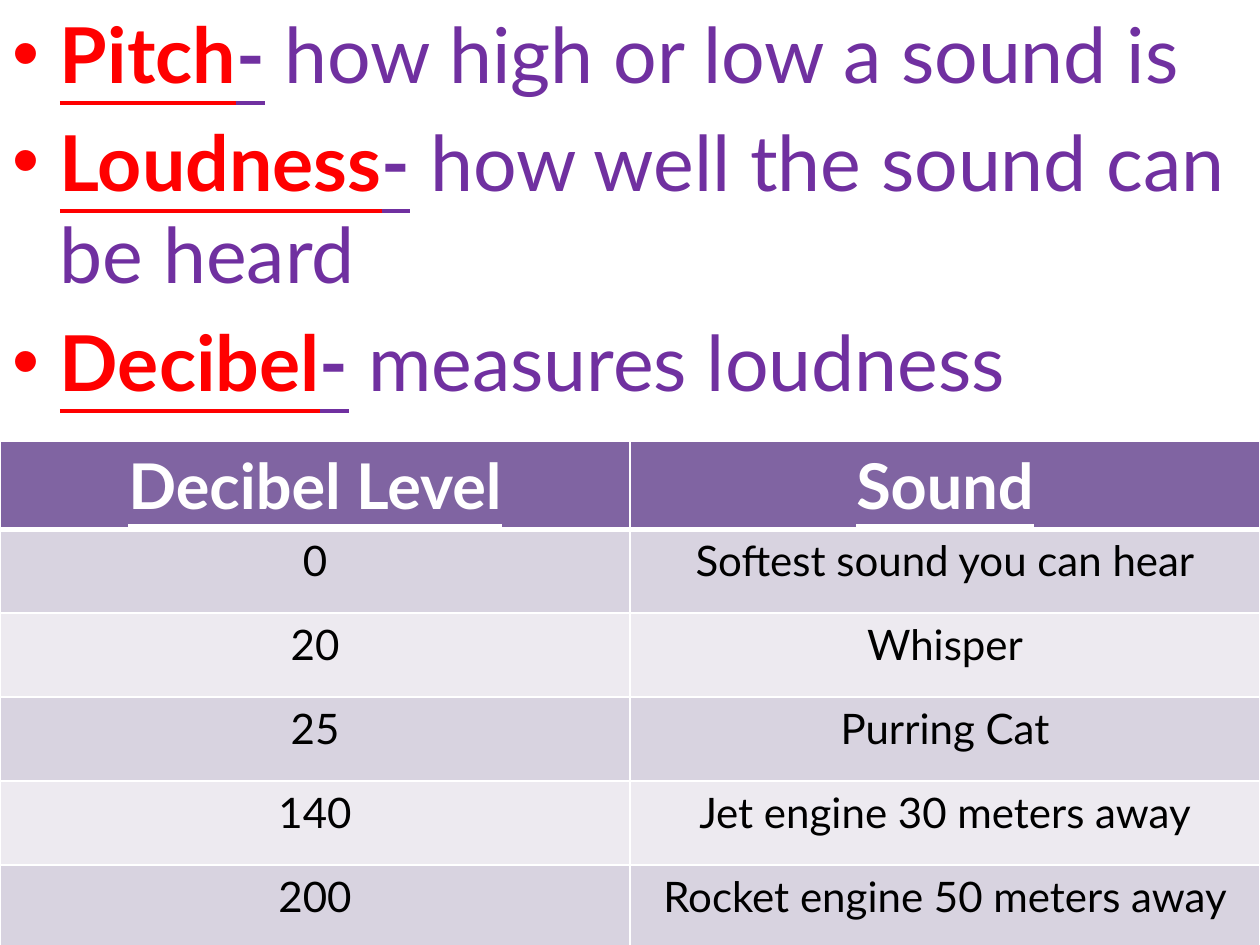
from dataclasses import dataclass

from lxml.etree import SubElement
from pptx import Presentation
from pptx.dml.color import RGBColor
from pptx.enum.text import MSO_AUTO_SIZE, PP_ALIGN
from pptx.oxml.ns import qn
from pptx.util import Emu, Pt

EMU_PER_PX = 914400 / 126
FONT = "Lato"
RED, PURPLE = "FF0000", "7030A0"
WHITE, BLACK = "FFFFFF", "000000"
HEADER_FILL = "8064A2"
BAND_FILLS = ("D8D3E0", "EDEAF0")


@dataclass
class Definition:
    term: str
    meaning: str


@dataclass
class CellStyle:
    fill: str
    color: str
    size: int
    emphasis: bool
    top: int
    bottom: int


DEFINITIONS = [
    Definition("Pitch", "how high or low a sound is"),
    Definition("Loudness", "how well the sound can be heard"),
    Definition("Decibel", "measures loudness"),
]
SOUND_LEVELS = [
    ("Decibel Level", "Sound"),
    ("0", "Softest sound you can hear"),
    ("20", "Whisper"),
    ("25", "Purring Cat"),
    ("140", "Jet engine 30 meters away"),
    ("200", "Rocket engine 50 meters away"),
]


def px(length: int) -> Emu:
    return Emu(round(length * EMU_PER_PX))


def rgb(color: str) -> RGBColor:
    return RGBColor.from_string(color)


def format_span(span, size: int, color: str, emphasis: bool) -> None:
    span.font.name = FONT
    span.font.size = Pt(size)
    span.font.color.rgb = rgb(color)
    span.font.bold = emphasis
    span.font.underline = emphasis


def add_definition(para, definition: Definition) -> None:
    parts = [
        (definition.term, RED, True),
        ("-", PURPLE, True),
        (f" {definition.meaning}", PURPLE, False),
    ]
    for text, color, emphasis in parts:
        span = para.add_run()
        span.text = text
        format_span(span, 44, color, emphasis)


def set_borders(cell, top: int, bottom: int) -> None:
    properties = cell._tc.get_or_add_tcPr()
    for side, width in (("L", 1), ("R", 1), ("T", top), ("B", bottom)):
        line = SubElement(properties, qn(f"a:ln{side}"), w=str(Pt(width)))
        fill = SubElement(line, qn("a:solidFill"))
        SubElement(fill, qn("a:srgbClr"), val=WHITE)


def style_for_row(row: int) -> CellStyle:
    if row == 0:
        return CellStyle(HEADER_FILL, WHITE, 36, True, top=1, bottom=3)
    fill = BAND_FILLS[(row - 1) % 2]
    return CellStyle(fill, BLACK, 24, False, top=3 if row == 1 else 1, bottom=1)


def fill_cell(cell, text: str, style: CellStyle) -> None:
    set_borders(cell, style.top, style.bottom)
    cell.fill.solid()
    cell.fill.fore_color.rgb = rgb(style.fill)
    para = cell.text_frame.paragraphs[0]
    para.text = text
    para.alignment = PP_ALIGN.CENTER
    format_span(para.runs[0], style.size, style.color, style.emphasis)


def add_definitions(page) -> None:
    box = page.placeholders[1]
    box.left, box.top, box.width, box.height = px(0), px(0), px(1260), px(624)
    frame = box.text_frame
    frame.auto_size = MSO_AUTO_SIZE.NONE
    for index, definition in enumerate(DEFINITIONS):
        para = frame.add_paragraph() if index else frame.paragraphs[0]
        add_definition(para, definition)


def add_sound_table(page) -> None:
    rows, columns = len(SOUND_LEVELS), len(SOUND_LEVELS[0])
    row_height = 84
    table = page.shapes.add_table(
        rows, columns, px(0), px(441), px(1260), px(rows * row_height)
    ).table
    for row, texts in enumerate(SOUND_LEVELS):
        for column, text in enumerate(texts):
            fill_cell(table.cell(row, column), text, style_for_row(row))


def main() -> None:
    deck = Presentation()
    deck.slide_width, deck.slide_height = px(1260), px(945)
    page = deck.slides.add_slide(deck.slide_layouts[1])

    # The page has no title
    title = page.shapes.title._element
    title.getparent().remove(title)

    # Definitions above, loudness examples below
    add_definitions(page)
    add_sound_table(page)
    deck.save("out.pptx")


if __name__ == "__main__":
    main()
